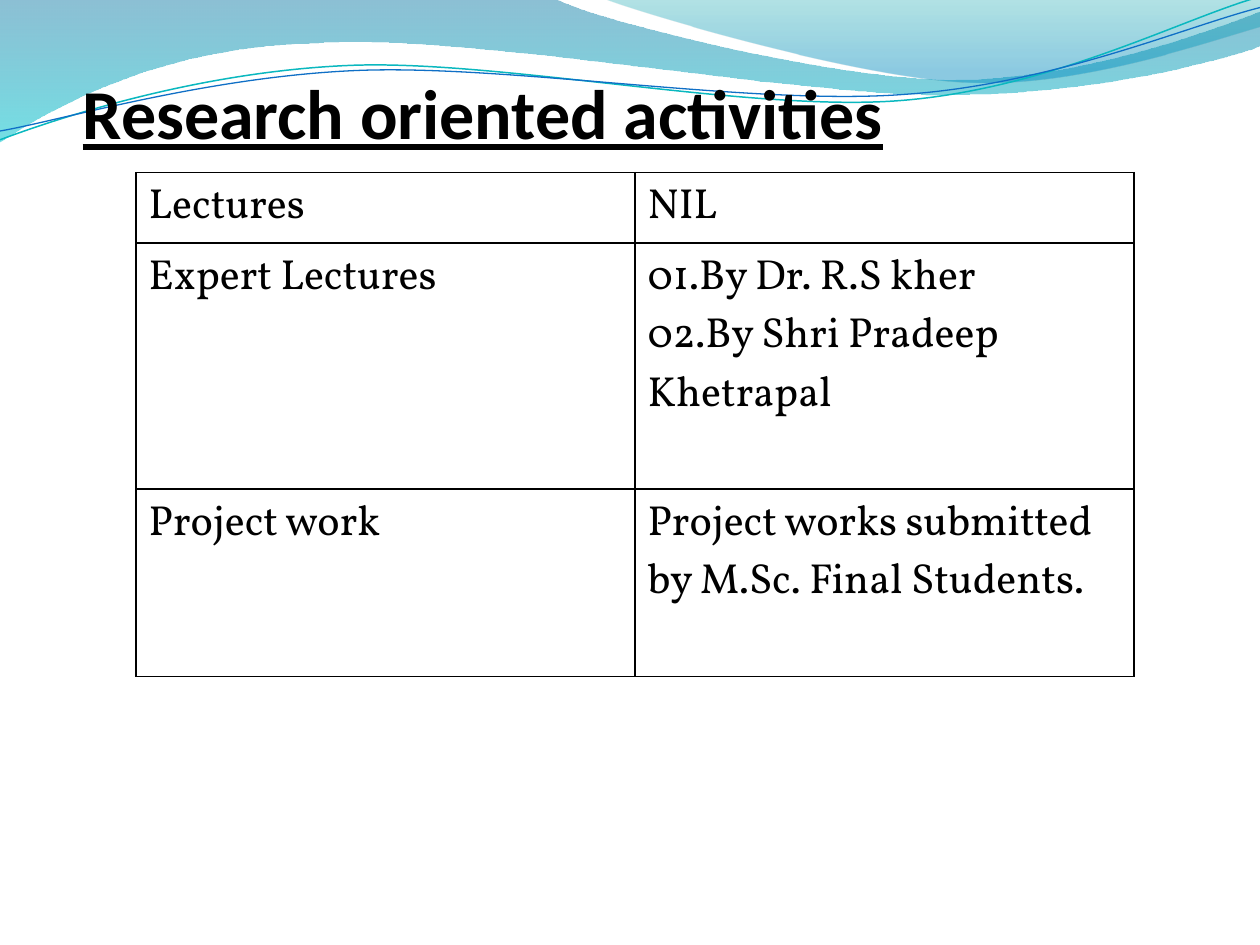
"""Build the research activities slide with its wave header and table."""
from lxml.etree import SubElement as Sub
from pptx import Presentation
from pptx.dml.color import RGBColor as Rgb
from pptx.enum.text import MSO_ANCHOR as Anchor
from pptx.oxml import parse_xml as to_xml
from pptx.oxml.ns import nsdecls, qn
from pptx.util import Inches, Pt

hue = Rgb.from_string


def draw(shapes, start, parts, close):
    dots = [dot for part in parts for dot in zip(part[::2], part[1::2])]
    form = shapes.build_freeform(*(round(v * 1000) for v in start),
                                 scale=Inches(1) / 1000)
    form.add_line_segments([(round(x * 1000), round(y * 1000))
                            for x, y in dots], close=close)
    shape = form.convert_to_shape()
    shape.shadow.inherit = False
    steps = iter(list(shape.element.iter(qn("a:lnTo"))))
    for part in parts:
        step = next(steps)
        if len(part) == 6:
            step.addprevious(to_xml(f'<a:cubicBezTo {nsdecls("a")}/>'))
            curve = step.getprevious()
            for spot in (step, next(steps), next(steps)):
                curve.append(spot[0])
                spot.getparent().remove(spot)
    return shape


deck = Presentation()
deck.slide_width, deck.slide_height = Inches(10), Inches(7.5)
slide = deck.slides.add_slide(deck.slide_layouts[6])
shapes = slide.shapes

waves = [
    ((0, 0), [(4.4, -0.01), (4.76, 0.17, 6.64, 0.63, 7.58, 0.63),
              (8.53, 0.63, 9.58, 0.26, 10, 0.09), (10.01, 0.36),
              (9.83, 0.44, 8.7, 0.76, 7.46, 0.75),
              (6.22, 0.75, 3.82, 0.28, 2.57, 0.34),
              (1.29, 0.36, 0.46, 0.83, -0.01, 1.13)],
     [(0, "0074A1", 45), (1, "00C6CF", 55)]),
    ((4.79, -0.01), [(5.09, 0.11, 6.82, 0.62, 7.69, 0.65),
                     (8.56, 0.69, 9.61, 0.32, 10, 0.21), (10, 0)],
     [(0, "00A1A9", 30), (0.8, "008BBF", 45)]),
]
for start, parts, stops in waves:
    wave = draw(shapes, start, parts, True)
    wave.line.fill.background()
    wave.fill.gradient()
    wave.fill.gradient_angle = 270
    for stop, (place, color, alpha) in zip(wave.fill.gradient_stops, stops):
        stop.position = place
        stop.color.rgb = hue(color)
    tints = wave.element.spPr.iter(qn("a:srgbClr"))
    for tint, (place, color, alpha) in zip(tints, stops):
        Sub(tint, qn("a:alpha"), val=str(alpha * 1000))

lines = [
    ((0, 1.11), [(0.48, 0.93, 1.58, 0.57, 2.77, 0.52),
                 (3.95, 0.47, 5.93, 0.89, 7.13, 0.8),
                 (8.33, 0.71, 9.38, 0.15, 9.98, -0.02)], "0AB8BF", 0.85),
    ((0, 1.04), [(0.47, 0.96, 1.64, 0.61, 2.83, 0.56),
                 (4.03, 0.51, 5.97, 0.84, 7.17, 0.75),
                 (8.36, 0.67, 9.41, 0.21, 10, 0.06)], "0F6FC6", 0.75),
]
for start, parts, color, width in lines:
    line = draw(shapes, start, parts, False)
    line.fill.background()
    line.line.color.rgb = hue(color)
    line.line.width = Pt(width)

title = shapes.add_textbox(Inches(0.5), 0, Inches(9), Inches(1.25))
frame = title.text_frame
frame.word_wrap = True
frame.vertical_anchor = Anchor.BOTTOM
frame.margin_left = frame.margin_right = frame.margin_bottom = 0
frame.margin_top = Inches(0.05)
for text, size, color, strong in [
        (" ", 50, "04617B", False),
        ("Research oriented activities", 40, "000000", True)]:
    run = frame.paragraphs[0].add_run()
    run.text = text
    run.font.name, run.font.size = "Calibri", Pt(size)
    run.font.color.rgb = hue(color)
    run.font.bold = run.font.underline = strong

rows = [
    (0.56, ["Lectures"], ["NIL"]),
    (1.95, ["Expert Lectures"],
     ["01.By Dr. R.S kher", "02.By Shri Pradeep Khetrapal"]),
    (1.49, ["Project work"],
     ["Project works submitted by M.Sc. Final Students."]),
]
table = shapes.add_table(len(rows), 2, Inches(1.08), Inches(1.37),
                         Inches(7.92), Inches(4)).table
table.first_row = table.horz_banding = False
for r, (height, *texts) in enumerate(rows):
    table.rows[r].height = Inches(height)
    for c, paras in enumerate(texts):
        cell = table.cell(r, c)
        cell.fill.background()
        for n, text in enumerate(paras):
            body = cell.text_frame
            para = body.add_paragraph() if n else body.paragraphs[0]
            run = para.add_run()
            run.text = text
            run.font.name, run.font.size = "Vollkorn", Pt(24)
            run.font.color.rgb = hue("000000")
        props = cell._tc.get_or_add_tcPr()
        for n, side in enumerate("LRTB"):
            props.insert(n, to_xml(
                f'<a:ln{side} {nsdecls("a")} w="{Pt(1)}"><a:solidFill>'
                f'<a:srgbClr val="000000"/></a:solidFill></a:ln{side}>'))

deck.save("out.pptx")
